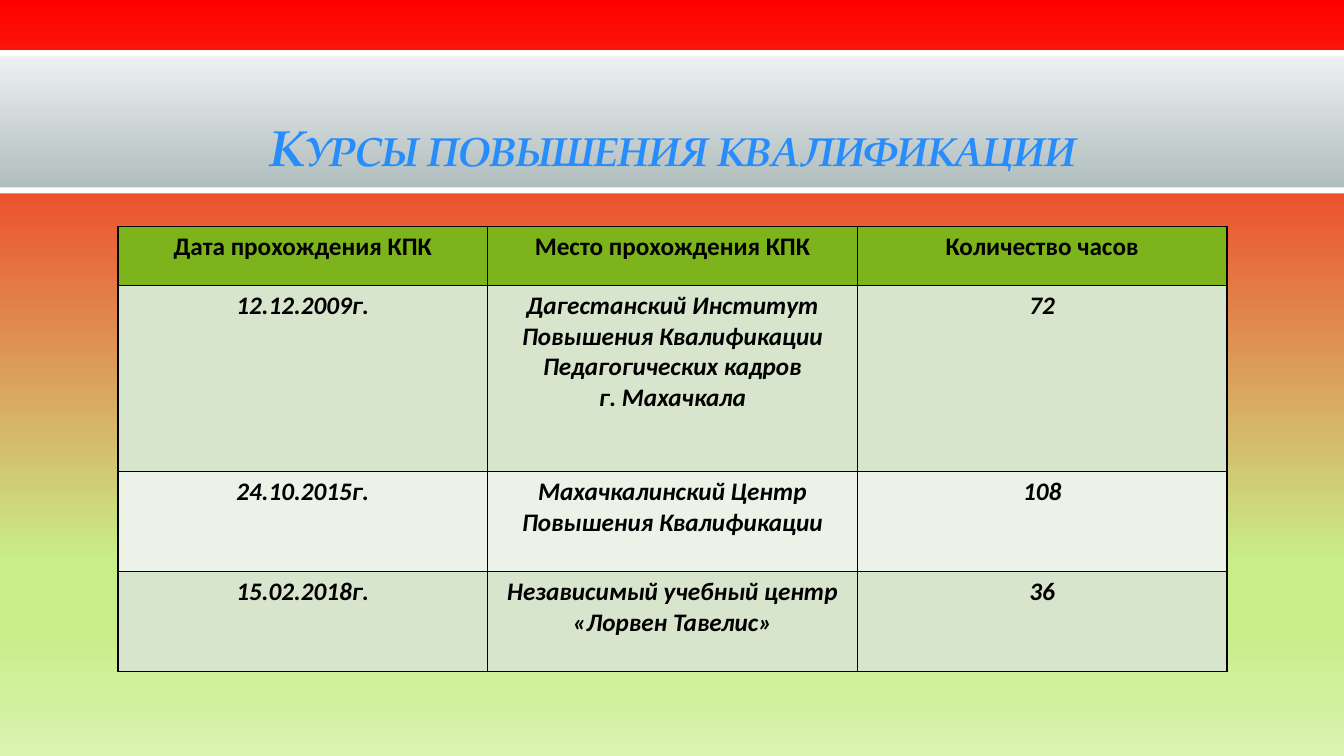
"""Builds the slide that lists professional training courses in a table."""
import dataclasses
import typing

import lxml.etree
import pptx
import pptx.dml.color
import pptx.enum.shapes
import pptx.enum.text
import pptx.oxml.ns
import pptx.util

SCALE = 9144
SIZE = (1333, 750)
HEAD = "7DB41B"
BANDS = ("D7E5CD", "ECF2E8")
SKY = [(0, "FF0000"), (74, "C9ED88"), (83, "C9ED88"), (100, "DBF3B0")]
STEEL = [(0, "EFF2F2"), (100, "B0BCBC")]
qn = pptx.oxml.ns.qn


@dataclasses.dataclass
class Bar:
    top: int
    height: int
    stops: list[tuple[int, str]]


BARS = [
    Bar(50, 139, STEEL),
    Bar(186, 6, [(0, "FFFFFF")]),
    Bar(50, 6, [(0, "FFFFFF")]),
]
TITLE = "Курсы повышения квалификации"
TITLE_BOX = (117, 61, 1100, 120)
TABLE_BOX = (117, 225, 1100, 441)
HEIGHTS = (58, 185, 99, 99)
ROWS = [
    ("Дата прохождения КПК", "Место прохождения КПК", "Количество часов"),
    ("12.12.2009г.",
     "Дагестанский Институт Повышения Квалификации Педагогических кадров\n"
     "г. Махачкала", "72"),
    ("24.10.2015г.", "Махачкалинский Центр Повышения Квалификации", "108"),
    ("15.02.2018г.", "Независимый учебный центр «Лорвен Тавелис»", "36"),
]
TITLE_FONT = {"name": "TeX Gyre Pagella", "size": pptx.util.Pt(36),
              "bold": True, "italic": True}
CELL_FONT = {"name": "Calibri", "size": pptx.util.Pt(18), "bold": True}


def px(count: int) -> pptx.util.Emu:
    """Turns px into EMU."""
    return pptx.util.Emu(count * SCALE)


def paint(target: typing.Any, tone: str) -> None:
    """Gives a fill or a font one solid colour."""
    if hasattr(target, "solid"):
        target.solid()
        target = target.fore_color
    else:
        target = target.color
    target.rgb = pptx.dml.color.RGBColor.from_string(tone)


def blend(fill: typing.Any, root: typing.Any,
          stops: list[tuple[int, str]]) -> None:
    """Fills from top to bottom with the given stops."""
    fill.gradient()
    fill.gradient_angle = 270
    group = root.find(".//" + qn("a:gsLst"))
    for old in list(group):
        group.remove(old)
    for place, tone in stops:
        stop = lxml.etree.SubElement(group, qn("a:gs"), pos=str(place * 1000))
        lxml.etree.SubElement(stop, qn("a:srgbClr"), val=tone)


def style(frame: typing.Any, font: dict[str, typing.Any], tone: str) -> None:
    """Centres the text of a frame and formats its font."""
    for para in frame.paragraphs:
        para.alignment = pptx.enum.text.PP_ALIGN.CENTER
        for run in para.runs:
            for key, value in font.items():
                setattr(run.font, key, value)
            paint(run.font, tone)


def add_bar(slide: typing.Any, bar: Bar) -> None:
    """Draws one band across the slide."""
    shape = slide.shapes.add_shape(
        pptx.enum.shapes.MSO_SHAPE.RECTANGLE,
        0, px(bar.top), px(SIZE[0]), px(bar.height))
    shape.shadow.inherit = False
    shape.line.fill.background()
    if len(bar.stops) > 1:
        blend(shape.fill, shape._element, bar.stops)
    else:
        paint(shape.fill, bar.stops[0][1])


def set_title(slide: typing.Any) -> None:
    """Places the title above the bands and formats it."""
    title = slide.shapes.title
    for key, value in zip(("left", "top", "width", "height"), TITLE_BOX):
        setattr(title, key, px(value))
    frame = title.text_frame
    frame.text = TITLE
    form = {"word_wrap": True,
            "auto_size": pptx.enum.text.MSO_AUTO_SIZE.NONE,
            "vertical_anchor": pptx.enum.text.MSO_ANCHOR.BOTTOM}
    for key, value in form.items():
        setattr(frame, key, value)
    style(frame, TITLE_FONT, "288DFC")
    para = frame.paragraphs[0]
    para.line_spacing = 0.9
    para.runs[0].font._element.set("cap", "small")
    slide.shapes._spTree.append(title._element)


def frame_cell(cell: typing.Any) -> None:
    """Draws thin black borders round a cell."""
    props = cell._tc.get_or_add_tcPr()
    for side in "LRTB":
        line = lxml.etree.SubElement(
            props, qn(f"a:ln{side}"), w=str(pptx.util.Pt(1)))
        fill = lxml.etree.SubElement(line, qn("a:solidFill"))
        lxml.etree.SubElement(fill, qn("a:srgbClr"), val="000000")


def add_table(slide: typing.Any) -> None:
    """Draws the table of courses."""
    table = slide.shapes.add_table(
        len(ROWS), len(ROWS[0]), *map(px, TABLE_BOX)).table
    for row, height in zip(table.rows, HEIGHTS):
        row.height = px(height)
    for down, texts in enumerate(ROWS):
        tone = BANDS[(down - 1) % 2] if down else HEAD
        for across, text in enumerate(texts):
            cell = table.cell(down, across)
            cell.text = text
            frame_cell(cell)
            paint(cell.fill, tone)
            style(cell.text_frame, CELL_FONT | {"italic": down > 0}, "000000")


def main() -> None:
    """Builds and saves the slide."""
    deck = pptx.Presentation()
    deck.slide_width, deck.slide_height = map(px, SIZE)
    slide = deck.slides.add_slide(deck.slide_layouts[5])
    blend(slide.background.fill, slide._element, SKY)
    for bar in BARS:
        add_bar(slide, bar)
    set_title(slide)
    add_table(slide)
    deck.save("out.pptx")


if __name__ == "__main__":
    main()
